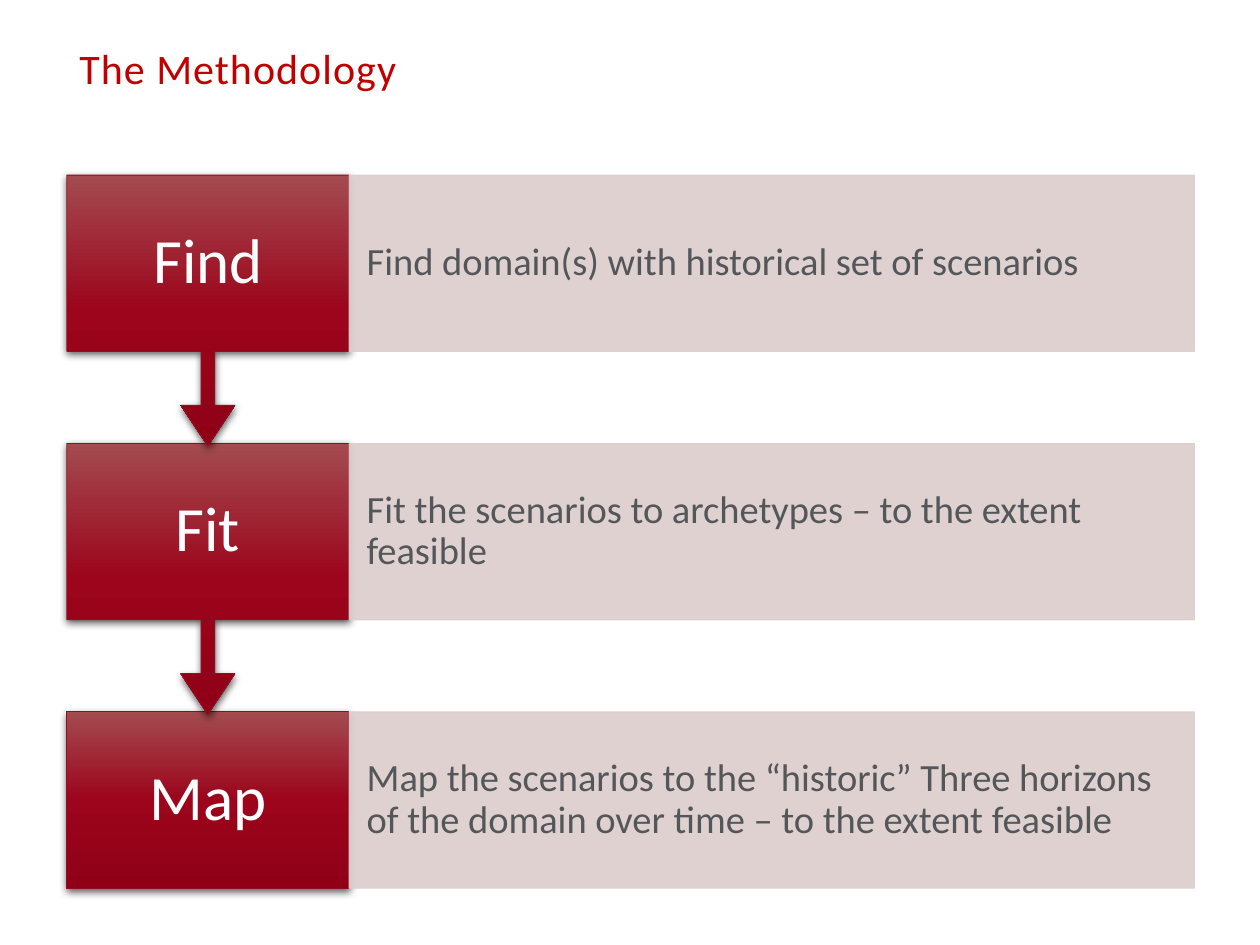
from lxml.etree import SubElement
from pptx import Presentation
from pptx.dml.color import RGBColor
from pptx.enum.shapes import MSO_SHAPE
from pptx.enum.text import MSO_ANCHOR, PP_ALIGN
from pptx.oxml import parse_xml
from pptx.oxml.ns import nsdecls, qn
from pptx.util import Inches, Pt

STEPS = [
    ("Find", "Find domain(s) with historical set of scenarios"),
    ("Fit", "Fit the scenarios to archetypes – to the extent feasible"),
    ("Map", "Map the scenarios to the “historic” Three horizons of the domain "
            "over time – to the extent feasible"),
]
STOPS = [(0, "A34B4F"), (50, "9C051C"), (100, "8F0016")]
LEFT, TOP, PITCH = 0.53, 1.39, 2.13
STEP_W, PANEL_W, BOX_H, CALL_H = 2.24, 6.71, 1.4, 2.15


def color(code):
    return RGBColor.from_string(code)


def write(frame, text, size, ink, align=PP_ALIGN.LEFT, lead=1.0,
          inset=(0.1, 0.05), track=0):
    frame.word_wrap = True
    frame.vertical_anchor = MSO_ANCHOR.MIDDLE
    frame.margin_left = frame.margin_right = Inches(inset[0])
    frame.margin_top = frame.margin_bottom = Inches(inset[1])
    para = frame.paragraphs[0]
    para.alignment, para.line_spacing = align, lead
    run = para.add_run()
    run.text = text
    run.font.name, run.font.size = "Calibri", Pt(size)
    run.font.color.rgb = color(ink)
    if track:
        run.font._element.set("spc", str(round(track * 100)))


def shade(shape):
    """Fill with the red gradient, light at the top."""
    stops = "".join(f'<a:gs pos="{pos * 1000}"><a:srgbClr val="{code}"/></a:gs>'
                    for pos, code in STOPS)
    fill = parse_xml(f'<a:gradFill {nsdecls("a")} rotWithShape="1"><a:gsLst>{stops}'
                     '</a:gsLst><a:lin ang="5400000" scaled="0"/></a:gradFill>')
    shape.element.spPr.find(qn("a:prstGeom")).addnext(fill)


def drop(shape):
    """Cast a soft shadow straight down."""
    effects = shape.element.spPr.find(qn("a:effectLst"))
    effects.append(parse_xml(
        f'<a:outerShdw {nsdecls("a")} blurRad="{Pt(4.5)}" dist="{Pt(1.5)}" '
        'dir="5400000" rotWithShape="0"><a:srgbClr val="000000">'
        '<a:alpha val="63000"/></a:srgbClr></a:outerShdw>'))


class Deck:
    """Holds the style and the current slide."""
    red, edge, pale, gray, white = "C00000", "950C21", "DDCCCD", "53575A", "FFFFFF"

    def __init__(self):
        self.show = Presentation()
        self.show.slide_width, self.show.slide_height = Inches(10), Inches(7.5)
        self.slide = self.show.slides.add_slide(self.show.slide_layouts[5])

    def title(self, text):
        box = self.slide.shapes.title
        box.left, box.top = Inches(LEFT), Inches(0)
        box.width, box.height = Inches(8.95), Inches(1.08)
        write(box.text_frame, text, 24, self.red, track=0.6)

    def block(self, kind, left, top, width, height, line):
        shape = self.slide.shapes.add_shape(
            kind, Inches(left), Inches(top), Inches(width), Inches(height))
        shape.shadow.inherit = False
        shape.line.color.rgb, shape.line.width = color(line), Pt(0.5)
        return shape

    def step(self, text, top, last):
        kind = MSO_SHAPE.RECTANGLE if last else MSO_SHAPE.DOWN_ARROW_CALLOUT
        shape = self.block(kind, LEFT, top, STEP_W, BOX_H if last else CALL_H,
                           self.edge)
        if not last:
            for spot, value in enumerate((0.05, 0.1, 0.15, 0.65)):
                shape.adjustments[spot] = value
        shade(shape)
        drop(shape)
        write(shape.text_frame, text, 36, self.white, PP_ALIGN.CENTER, 0.9,
              (0.16, 0.28))

    def panel(self, text, top):
        shape = self.block(MSO_SHAPE.RECTANGLE, LEFT + STEP_W, top, PANEL_W, BOX_H,
                           self.pale)
        shape.fill.solid()
        shape.fill.fore_color.rgb = color(self.pale)
        for tint in shape.element.spPr.iter(qn("a:srgbClr")):
            SubElement(tint, qn("a:alpha")).set("val", "90000")
        write(shape.text_frame, text, 22, self.gray, lead=0.9, inset=(0.14, 0.31))


def main():
    deck = Deck()
    deck.title("The Methodology")
    # Last row first, so that each arrow tip lies over the box below it
    for row, (name, detail) in reversed(list(enumerate(STEPS))):
        top = TOP + row * PITCH
        deck.step(name, top, row == len(STEPS) - 1)
        deck.panel(detail, top)
    deck.show.save("out.pptx")


if __name__ == "__main__":
    main()
